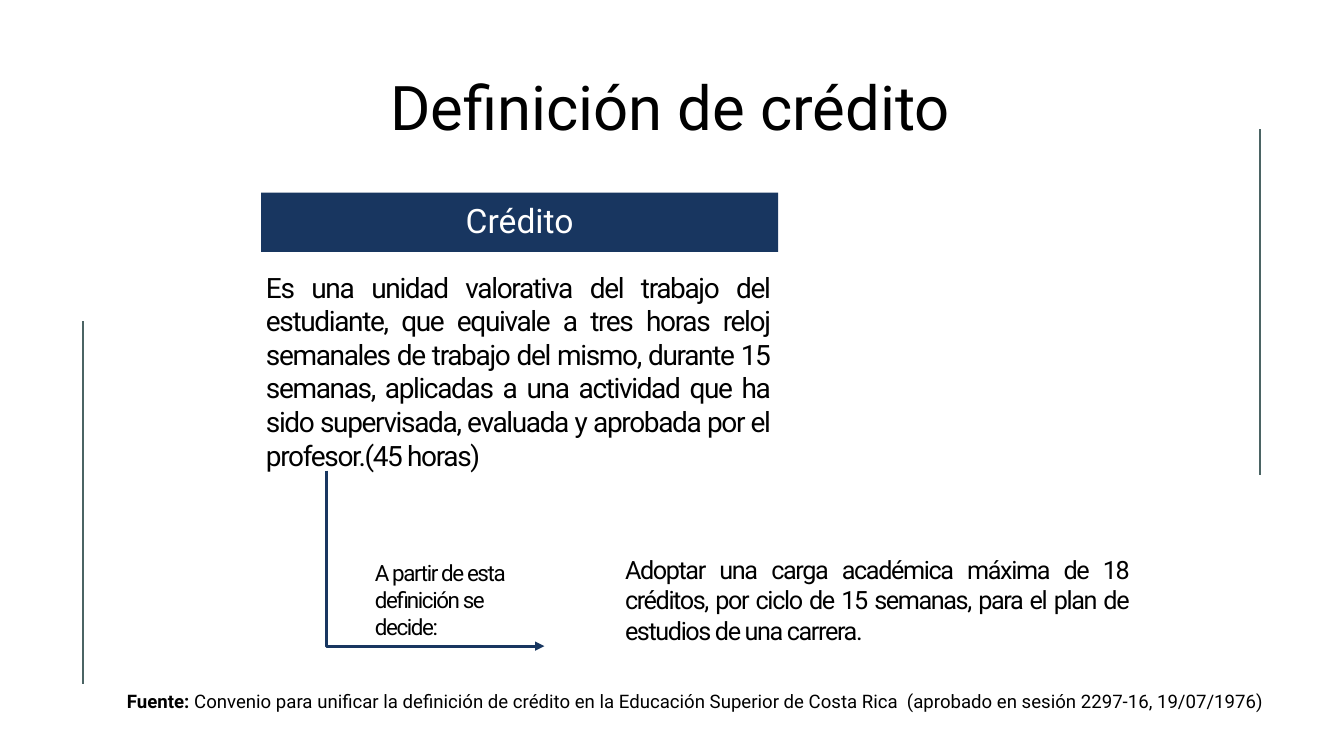
from lxml import etree
from pptx import Presentation
from pptx.dml.color import RGBColor
from pptx.enum.shapes import MSO_CONNECTOR, MSO_SHAPE
from pptx.enum.text import MSO_ANCHOR, PP_ALIGN
from pptx.oxml.ns import qn
from pptx.util import Inches, Pt

STRAIGHT, ELBOW = MSO_CONNECTOR.STRAIGHT, MSO_CONNECTOR.ELBOW
RECTANGLE = MSO_SHAPE.RECTANGLE
TOP, MIDDLE = MSO_ANCHOR.TOP, MSO_ANCHOR.MIDDLE
LEFT, CENTER, JUSTIFY = PP_ALIGN.LEFT, PP_ALIGN.CENTER, PP_ALIGN.JUSTIFY

FONT = "Roboto"
BLACK, WHITE, NAVY, SLATE = "000000", "FFFFFF", "183660", "4B6464"
SLIDE = (0, 0, Inches(13.33), Inches(7.5))
WIDE_INSET = 0.13


def color(hex_text):
    return RGBColor.from_string(hex_text)


def part(box, left, top, width, height):
    """Return the part of a box given as percentages of its size."""
    box_left, box_top, box_width, box_height = box
    return (round(box_left + box_width * left / 100),
            round(box_top + box_height * top / 100),
            round(box_width * width / 100),
            round(box_height * height / 100))


def write(shape, runs, size, align=LEFT, anchor=TOP, ink=BLACK,
          line_spacing=1.0, tracking=0, inset=None):
    """Fill a shape with one paragraph of (text, bold) runs."""
    frame = shape.text_frame
    frame.word_wrap = True
    frame.vertical_anchor = anchor
    if inset is not None:
        for side in ("left", "top", "right", "bottom"):
            setattr(frame, f"margin_{side}", Inches(inset))
    paragraph = frame.paragraphs[0]
    paragraph.alignment = align
    paragraph.line_spacing = line_spacing
    for text, bold in runs:
        run = paragraph.add_run()
        run.text = text
        for name, value in {"name": FONT, "size": Pt(size), "bold": bold}.items():
            setattr(run.font, name, value)
        run.font.color.rgb = color(ink)
        if tracking:
            run._r.get_or_add_rPr().set("spc", str(tracking * 100))


def add_text(slide, box, runs, size, **formats):
    write(slide.shapes.add_textbox(*box), runs, size, **formats)


def add_line(slide, kind, box, hex_text, weight):
    left, top, width, height = box
    line = slide.shapes.add_connector(kind, left, top, left + width, top + height)
    line.line.color.rgb = color(hex_text)
    line.line.width = Pt(weight)
    etree.SubElement(line._element.spPr, qn("a:effectLst"))
    return line


def add_corner_arrow(slide, box):
    """Draw an arrow down the left side of a box and along its bottom."""
    left, top, width, height = box
    # The preset runs right then down, so its frame is turned by a quarter.
    shift = (width - height) // 2
    turned = (left + shift, top - shift, height, width)
    arrow = add_line(slide, ELBOW, turned, NAVY, 2.25)
    properties = arrow._element.spPr
    properties.find(qn("a:prstGeom")).set("prst", "bentConnector2")
    frame = properties.find(qn("a:xfrm"))
    frame.set("rot", str(270 * 60000))
    frame.set("flipH", "1")
    etree.SubElement(properties.find(qn("a:ln")), qn("a:tailEnd"), type="triangle")


def add_side_rules(slide, box):
    for left, top, height in ((6.15, 42.53, 48), (93.77, 17.07, 45.73)):
        add_line(slide, STRAIGHT, part(box, left, top, 0, height), SLATE, 1.5)


def add_credit(slide, box):
    header = slide.shapes.add_shape(RECTANGLE, *part(box, 0.96, 0, 98.84, 20.77))
    header.shadow.inherit = False
    header.fill.solid()
    header.fill.fore_color.rgb = color(NAVY)
    header.line.fill.background()
    write(header, [("Crédito", False)], 24, align=CENTER, anchor=MIDDLE,
          ink=WHITE, line_spacing=0.9, inset=WIDE_INSET)
    definition = (
        "Es una unidad valorativa del trabajo del estudiante, que equivale a "
        "tres horas reloj semanales de trabajo del mismo, durante 15 semanas, "
        "aplicadas a una actividad que ha sido supervisada, evaluada y aprobada "
        "por el profesor.(45 horas)")
    add_text(slide, part(box, 0, 25.35, 100, 74.65), [(definition, False)], 20,
             align=JUSTIFY, tracking=-1)


def add_decision(slide, box):
    add_corner_arrow(slide, part(box, 0, 0, 26.83, 97.21))
    add_text(slide, part(box, 4.72, 46.37, 21.99, 50.84),
             [("A partir de esta definición se decide:", False)], 16, tracking=-1)
    decision = ("Adoptar una carga académica máxima de 18 créditos, por ciclo "
                "de 15 semanas, para el plan de estudios de una carrera.")
    add_text(slide, part(box, 35.53, 43.58, 64.47, 56.42), [(decision, False)], 18,
             align=JUSTIFY, tracking=-1)


def add_title(slide, box):
    add_text(slide, box, [("Definición de crédito", False)], 44, align=CENTER,
             anchor=MIDDLE, line_spacing=0.9, inset=WIDE_INSET)


def add_source(slide, box):
    citation = ("Convenio para unificar la definición de crédito en la Educación "
                "Superior de Costa Rica  (aprobado en sesión 2297-16, 19/07/1976)")
    add_text(slide, box, [("Fuente: ", True), (citation, False)], 13.3,
             align=JUSTIFY, line_spacing=0.9)


def main():
    presentation = Presentation()
    presentation.slide_width, presentation.slide_height = SLIDE[2:]
    slide = presentation.slides.add_slide(presentation.slide_layouts[6])
    add_side_rules(slide, SLIDE)
    add_source(slide, part(SLIDE, 8.7, 90.93, 86.27, 12.67))
    add_title(slide, part(SLIDE, 22.73, 9.07, 54.31, 11.2))
    add_decision(slide, part(SLIDE, 24.31, 62.27, 60.39, 23.87))
    add_credit(slide, part(SLIDE, 19.05, 25.47, 38.93, 37.87))
    presentation.save("out.pptx")


if __name__ == "__main__":
    main()
